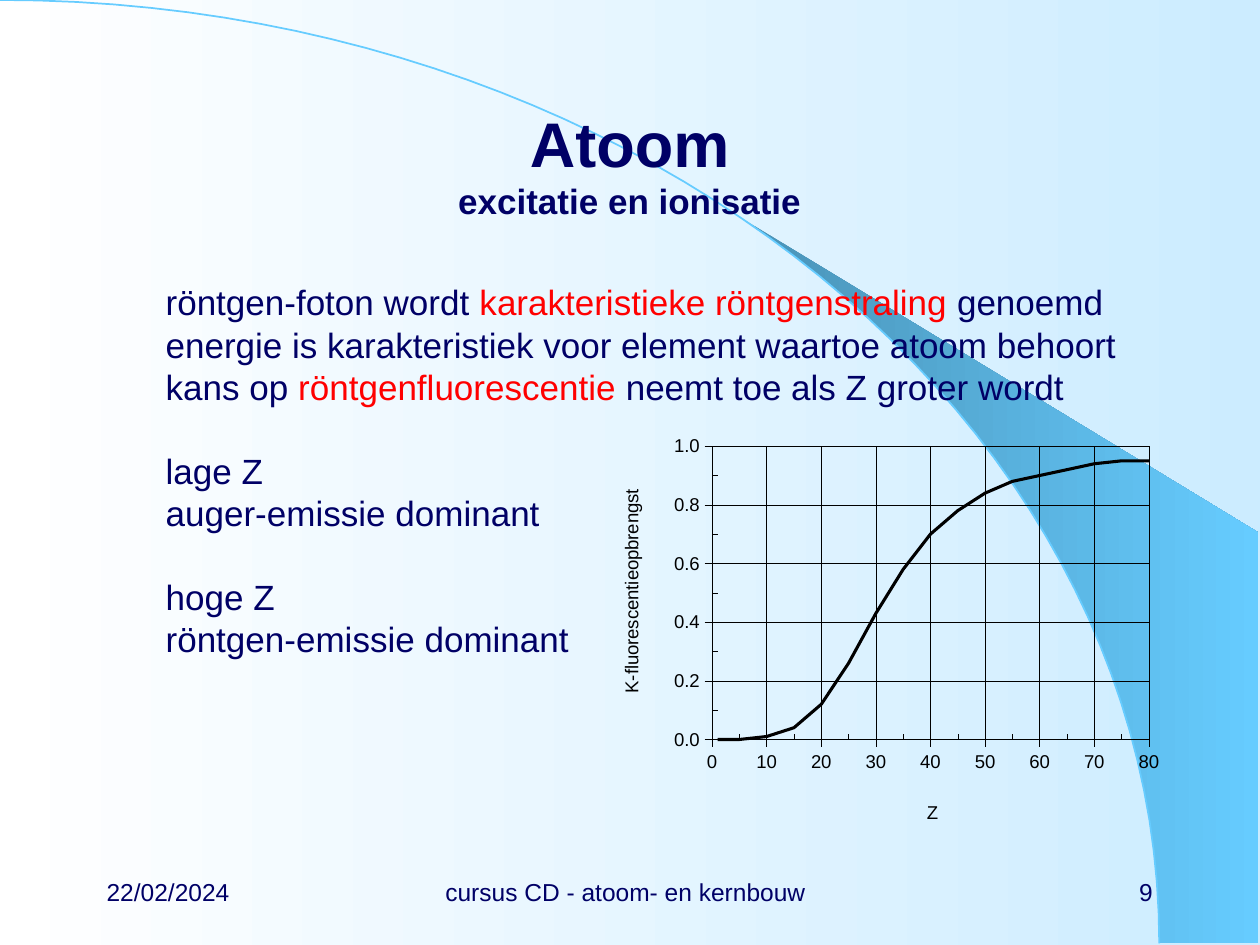
from lxml.etree import SubElement, Element
from pptx import Presentation
from pptx.chart.data import XyChartData
from pptx.dml.color import RGBColor
from pptx.enum.chart import XL_CHART_TYPE as Kind, XL_TICK_MARK as Tick
from pptx.enum.text import MSO_ANCHOR as Anchor, PP_ALIGN as Align
from pptx.oxml.ns import qn
from pptx.util import Cm, Pt

HUES = {"ink": "000066", "key": "FF0000", "line": "000000", "white": "FFFFFF",
        "pale": "CCECFF", "deep": "4992B6", "sky": "66CCFF"}
YIELD = {1: 0, 5: 0, 10: 0.01, 15: 0.04, 20: 0.12, 25: 0.26, 30: 0.43,
         35: 0.58, 40: 0.7, 45: 0.78, 50: 0.84, 55: 0.88, 60: 0.9,
         65: 0.92, 70: 0.94, 75: 0.95, 80: 0.95}
# Each line of the body: gap above in points, then runs of text and colour
BODY = [
    (0, [("röntgen-foton wordt ", "ink"),
         ("karakteristieke röntgenstraling", "key"), (" genoemd", "ink")]),
    (0, [("energie is karakteristiek voor element waartoe atoom behoort", "ink")]),
    (0, [("kans op ", "ink"), ("röntgenfluorescentie ", "key"),
         ("neemt toe als Z groter wordt", "ink")]),
    (24, [("lage Z", "ink")]),
    (0, [("auger-emissie dominant", "ink")]),
    (24, [("hoge Z", "ink")]),
    (0, [("röntgen-emissie dominant", "ink")]),
]


def hue(name):
    return RGBColor.from_string(HUES[name])


def blend(fill, *names):
    """Fill from left to right between two colours."""
    fill.gradient()
    fill.gradient_angle = 0
    for stop, name, spot in zip(fill.gradient_stops, names, (0, 1)):
        stop.color.rgb = hue(name)
        stop.position = spot


def curve(ends, steps=50):
    """Points along a cubic Bezier."""
    a, b, c, d = ends
    ts = [i / steps for i in range(steps + 1)]
    return [tuple((1 - t) ** 3 * p + 3 * (1 - t) ** 2 * t * q
                  + 3 * (1 - t) * t ** 2 * r + t ** 3 * s
                  for p, q, r, s in zip(a, b, c, d)) for t in ts]


def place(node, index, **spots):
    """Give a chart part a fixed layout, as fractions of the chart."""
    old = node.find(qn("c:layout"))
    if old is not None:
        node.remove(old)
    lay = Element(qn("c:layout"))
    node.insert(index, lay)
    man = SubElement(lay, qn("c:manualLayout"))
    if "w" in spots:
        SubElement(man, qn("c:layoutTarget")).set("val", "inner")
    for side in "xy":
        SubElement(man, qn(f"c:{side}Mode")).set("val", "edge")
    for side, size in spots.items():
        SubElement(man, qn(f"c:{side}")).set("val", str(size))


class Deck:
    font = "Arial"

    def __init__(self, wide, high):
        self.prs = Presentation()
        self.prs.slide_width, self.prs.slide_height = Cm(wide), Cm(high)
        self.page = self.prs.slides.add_slide(self.prs.slide_layouts[6])
        blend(self.page.background.fill, "white", "pale")

    def style(self, font, size, color, bold=False):
        font.name, font.size, font.bold = self.font, Pt(size), bold
        font.color.rgb = hue(color)

    def shape(self, points, close):
        dots = [(Cm(x), Cm(y)) for x, y in points]
        pen = self.page.shapes.build_freeform(*dots[0], scale=1.0)
        pen.add_line_segments(dots[1:], close=close)
        form = pen.convert_to_shape()
        form.shadow.inherit = False
        return form

    def wedge(self, points):
        form = self.shape(points, True)
        blend(form.fill, "deep", "sky")
        form.line.fill.background()

    def arc(self, points):
        form = self.shape(points, False)
        form.fill.background()
        form.line.color.rgb, form.line.width = hue("sky"), Pt(1)

    def frame(self, box, anchor=Anchor.MIDDLE):
        text = self.page.shapes.add_textbox(*map(Cm, box)).text_frame
        text.word_wrap, text.vertical_anchor = True, anchor
        return text

    def run(self, para, words, size, color="ink", bold=False):
        run = para.add_run()
        run.text = words
        self.style(run.font, size, color, bold)

    def title(self, box, head, sub):
        para = self.frame(box).paragraphs[0]
        para.alignment = Align.CENTER
        self.run(para, head, 36, bold=True)
        para.add_line_break()
        self.run(para, sub, 20, bold=True)

    def body(self, box, lines):
        text = self.frame(box, Anchor.TOP)
        for i, (gap, runs) in enumerate(lines):
            para = text.add_paragraph() if i else text.paragraphs[0]
            para.line_spacing, para.space_before = Pt(24), Pt(gap)
            para._p.get_or_add_pPr().set("marL", str(Cm(1.19)))
            for words, color in runs:
                self.run(para, words, 20, color)

    def foot(self, left, wide, words, align):
        para = self.frame((left, 17.35, wide, 1.27)).paragraphs[0]
        para.alignment = align
        self.run(para, words, 14)

    def axis(self, axis, name, top, step, form, spot):
        axis.minimum_scale, axis.maximum_scale = 0, top
        axis.major_unit = step
        axis.major_tick_mark, axis.minor_tick_mark = Tick.OUTSIDE, Tick.INSIDE
        axis.has_major_gridlines = True
        for line in (axis.format.line, axis.major_gridlines.format.line):
            line.color.rgb, line.width = hue("line"), Pt(0.22)
        labels = axis.tick_labels
        labels.number_format, labels.number_format_is_linked = form, False
        self.style(labels.font, 10.6, "line")
        self.run(axis.axis_title.text_frame.paragraphs[0], name, 10.6, "line")
        place(axis.axis_title._element, 1, **spot)
        node = axis._element
        unit = Element(qn("c:minorUnit"))
        unit.set("val", str(step / 2))
        node.find(qn("c:majorUnit")).addnext(unit)

    def chart(self, box, data):
        table = XyChartData()
        row = table.add_series("Series 1")
        for x, y in data.items():
            row.add_data_point(x, y)
        chart = self.page.shapes.add_chart(
            Kind.XY_SCATTER_SMOOTH_NO_MARKERS, *map(Cm, box), table).chart
        chart.has_legend = chart.has_title = False
        self.style(chart.font, 10.6, "line")
        chart.plots[0].vary_by_categories = False
        curve_row = chart.plots[0].series[0]
        curve_row.smooth = True
        line = curve_row.format.line
        line.color.rgb, line.width = hue("line"), Pt(1.77)
        self.axis(chart.category_axis, "Z", 80, 10, "0", {"x": 0.56, "y": 0.89})
        self.axis(chart.value_axis, "K-fluorescentieopbrengst", 1, 0.2, "0.0",
                  {"x": 0.03, "y": 0.18})
        place(chart._chartSpace.chart.plotArea, 0, x=0.196, y=0.09, w=0.752, h=0.669)


def main():
    deck = Deck(25.4, 19.05)
    arc = curve([(0, 0), (12.9, 0), (23.37, 8.51), (23.37, 19.02)])
    deck.wedge(arc[22:] + [(25.37, 19.02), (25.37, 10.74)])
    deck.arc(arc)
    deck.foot(1.9, 5.28, "22/02/2024", Align.LEFT)
    deck.foot(7.11, 11, "cursus CD - atoom- en kernbouw", Align.CENTER)
    deck.foot(18.21, 5.28, "9", Align.RIGHT)
    deck.title((1.9, 1.7, 21.59, 3.18), "Atoom", "excitatie en ionisatie")
    deck.body((1.9, 5.54, 22.81, 11.43), BODY)
    deck.chart((12.06, 8.2, 11.71, 8.84), YIELD)
    deck.prs.save("out.pptx")


if __name__ == "__main__":
    main()
